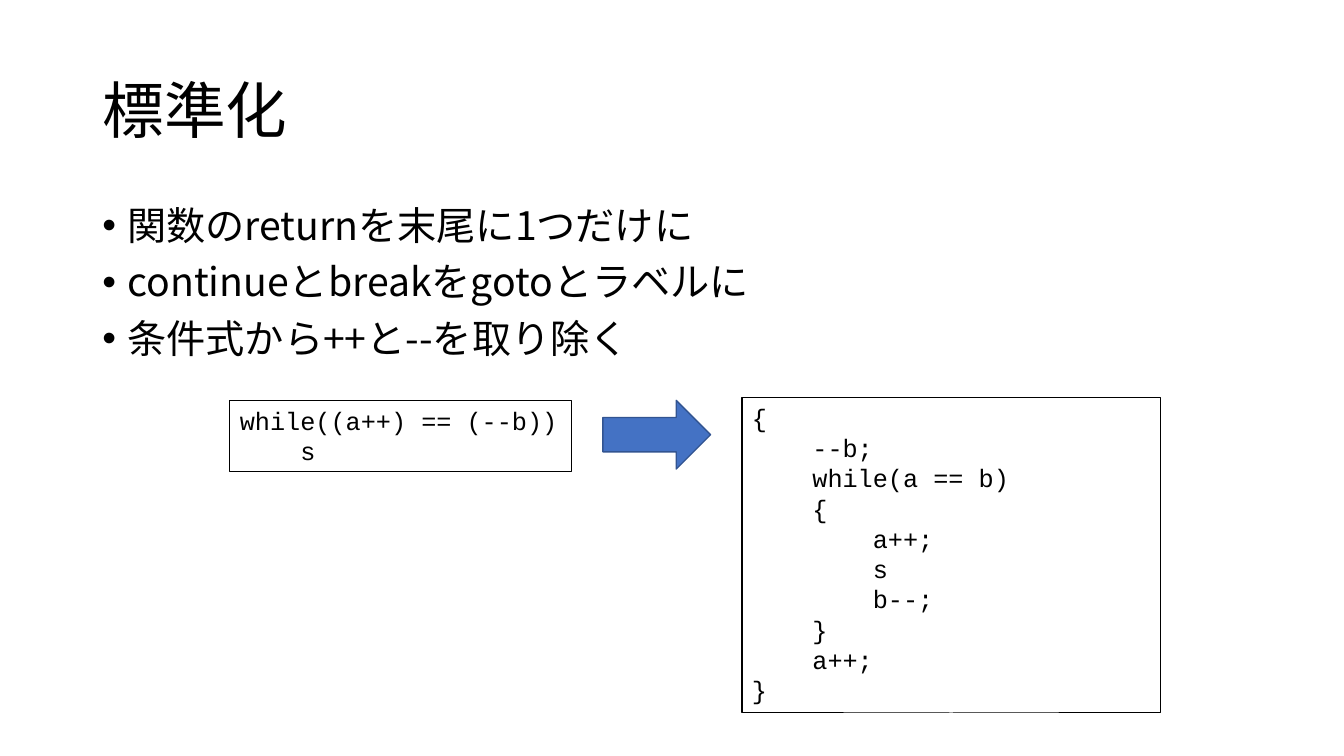
from lxml import etree
from pptx import Presentation
from pptx import util as u
from pptx.dml.color import RGBColor
from pptx.enum import shapes, text
from pptx.oxml.ns import qn

# Content: code lines are (indent level, text)
TITLE = "標準化"
BULLETS = [
    "関数のreturnを末尾に1つだけに",
    "continueとbreakをgotoとラベルに",
    "条件式から++と--を取り除く",
]
BEFORE = [(0, "while((a++) == (--b))"), (1, "s")]
AFTER = [
    (0, "{"), (1, "--b;"), (1, "while(a == b)"), (1, "{"), (2, "a++;"),
    (2, "s"), (2, "b--;"), (1, "}"), (1, "a++;"), (0, "}"),
]

# Places in points: left, top, width, height
TITLE_AT = (66, 29, 828, 104)
BULLETS_AT = (66, 144, 828, 343)
BEFORE_AT = (164.2, 286, 244.1, 51)
ARROW_AT = (430.6, 286, 77, 49)
AFTER_AT = (530, 283.7, 298.8, 225.6)

THEME = {
    "ink": RGBColor(0, 0, 0),
    "arrow": RGBColor(0x44, 0x72, 0xC4),
    "arrow_edge": RGBColor(0x32, 0x54, 0x91),
    "prose": "Noto Sans CJK JP",
    "code": "Courier New",
    "title_size": 44,
    "bullet_size": 28,
    "code_size": 18,
}
CODE_INDENT = 4 * 0.6 * THEME["code_size"]  # four monospaced characters
BULLET_INDENT = 18


def points(place):
    return [u.Pt(value) for value in place]


def apply(target, values):
    for name, value in values.items():
        setattr(target, name, value)


def write(para, words, font, size, indent=0, hanging=0, **values):
    span = para.add_run()
    span.text = words
    apply(span.font, {"name": font, "size": u.Pt(size)})
    span.font.color.rgb = THEME["ink"]
    east_asian = etree.SubElement(span.font._element, qn("a:ea"))
    east_asian.set("typeface", font)
    apply(para, {"alignment": text.PP_ALIGN.LEFT, **values})
    props = para._p.get_or_add_pPr()
    props.set("marL", str(u.Pt(indent)))
    props.set("indent", str(u.Pt(-hanging)))


def paragraphs(frame, count):
    return [frame.paragraphs[0]] + [frame.add_paragraph() for _ in range(count - 1)]


def add_code(page, place, lines):
    box = page.shapes.add_textbox(*points(place))
    box.line.color.rgb = THEME["ink"]
    box.line.width = u.Pt(0.75)
    frame = box.text_frame
    apply(frame, {"word_wrap": True, "auto_size": text.MSO_AUTO_SIZE.SHAPE_TO_FIT_TEXT})
    for para, (level, words) in zip(paragraphs(frame, len(lines)), lines):
        write(para, words, THEME["code"], THEME["code_size"], level * CODE_INDENT)


def main():
    deck = Presentation()
    apply(deck, {"slide_width": u.Pt(960), "slide_height": u.Pt(540)})
    page = deck.slides.add_slide(deck.slide_layouts[5])

    # Title
    title = page.shapes.title
    apply(title, dict(zip(("left", "top", "width", "height"), points(TITLE_AT))))
    apply(title.text_frame, {
        "word_wrap": True,
        "auto_size": text.MSO_AUTO_SIZE.NONE,
        "vertical_anchor": text.MSO_ANCHOR.MIDDLE,
    })
    write(title.text_frame.paragraphs[0], TITLE, THEME["prose"],
          THEME["title_size"], line_spacing=0.9)

    # Bullet list
    frame = page.shapes.add_textbox(*points(BULLETS_AT)).text_frame
    frame.word_wrap = True
    for para, words in zip(paragraphs(frame, len(BULLETS)), BULLETS):
        write(para, words, THEME["prose"], THEME["bullet_size"],
              BULLET_INDENT, BULLET_INDENT, line_spacing=0.9, space_before=u.Pt(10))
        props = para._p.get_or_add_pPr()
        etree.SubElement(props, qn("a:buFont")).set("typeface", "Arial")
        etree.SubElement(props, qn("a:buChar")).set("char", "•")

    # Code before and after, with the arrow between them
    add_code(page, BEFORE_AT, BEFORE)
    arrow = page.shapes.add_shape(shapes.MSO_SHAPE.RIGHT_ARROW, *points(ARROW_AT))
    arrow.shadow.inherit = False
    arrow.fill.solid()
    arrow.fill.fore_color.rgb = THEME["arrow"]
    arrow.line.color.rgb = THEME["arrow_edge"]
    arrow.line.width = u.Pt(1)
    add_code(page, AFTER_AT, AFTER)

    deck.save("out.pptx")


if __name__ == "__main__":
    main()
